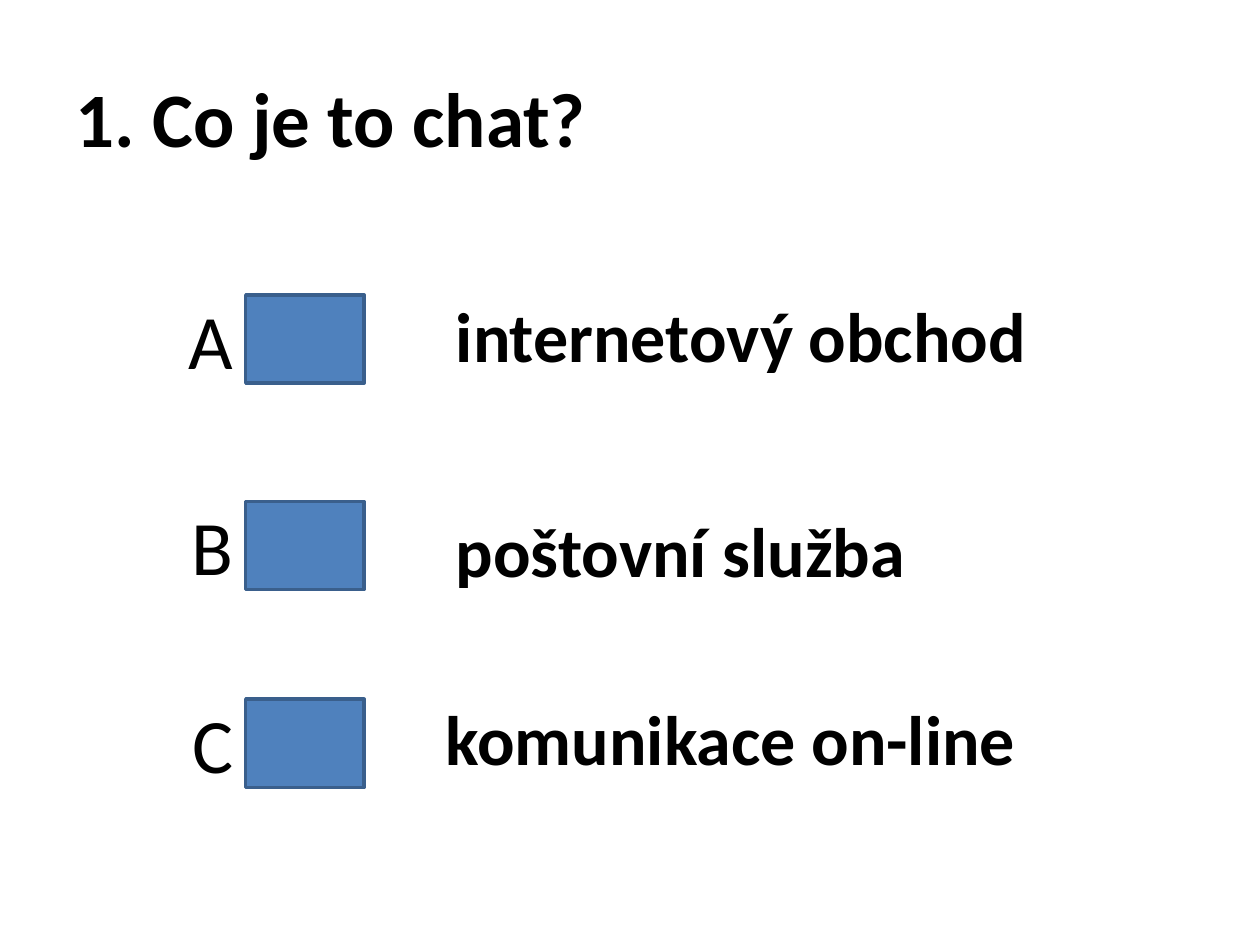
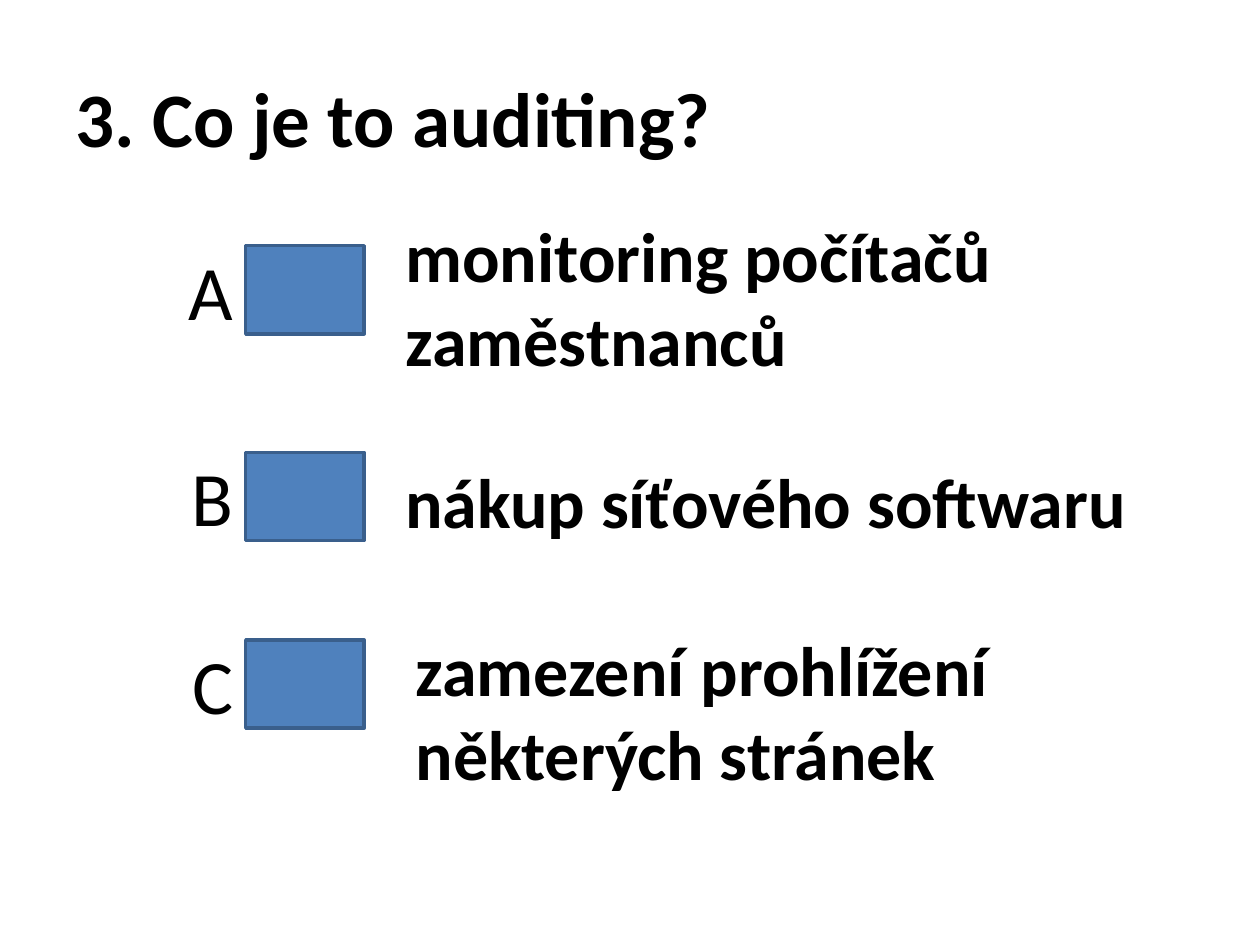
from pptx import Presentation
from pptx import util as u
from pptx.dml.color import RGBColor
from pptx.enum import shapes, text

BLACK = RGBColor(0x00, 0x00, 0x00)
BUTTON_BLUE = RGBColor(0x4F, 0x81, 0xBD)
BORDER_BLUE = RGBColor(0x3A, 0x5F, 0x8C)
FONT = "Calibri"

LETTER_LEFT, LETTER_WIDTH, LETTER_HEIGHT = 0.86, 1.09, 0.84
BUTTON_LEFT = LETTER_LEFT + LETTER_WIDTH
BUTTON_WIDTH, BUTTON_HEIGHT = 0.94, 0.7
LETTER_RISE = (LETTER_HEIGHT - BUTTON_HEIGHT) / 2
TITLE_INDENT = u.Inches(0.58)

# Each answer: button top, then the text with its left, top, width and height
QUESTIONS = [
    ("1. Co je to chat?", [
        (2.34, "internetový obchod", (3.52, 2.27, 5.16, 0.77)),
        (3.98, "poštovní služba", (3.52, 3.98, 4.53, 0.77)),
        (5.55, "komunikace on-line", (3.44, 5.47, 5, 0.77)),
    ]),
    ("3. Co je to auditing?", [
        (1.95, "monitoring počítačů zaměstnanců", (3.12, 1.64, 6.09, 1.45)),
        (3.59, "nákup síťového softwaru", (3.12, 3.59, 6.64, 0.77)),
        (5.08, "zamezení prohlížení některých stránek", (3.2, 4.92, 6.17, 1.45)),
    ]),
]


def write(shape, words, size, bold, align):
    shape.text_frame.word_wrap = True
    para = shape.text_frame.paragraphs[0]
    para.text = words
    para.alignment = align
    para.font.name = FONT
    para.font.size = u.Pt(size)
    para.font.bold = bold
    para.font.color.rgb = BLACK
    return para


def inches(*lengths):
    return [u.Inches(length) for length in lengths]


deck = Presentation()
deck.slide_width, deck.slide_height = inches(10, 7.5)
title_only = deck.slide_layouts[5]

for question, answers in QUESTIONS:
    page = deck.slides.add_slide(title_only)

    title = page.shapes.title
    title.left, title.top, title.width, title.height = inches(0.5, 0.3, 9, 1.25)
    title.text_frame.vertical_anchor = text.MSO_ANCHOR.MIDDLE
    para = write(title, question, 44, True, text.PP_ALIGN.LEFT)
    properties = para._p.get_or_add_pPr()
    properties.set("marL", str(TITLE_INDENT))
    properties.set("indent", str(-TITLE_INDENT))

    for letter, (top, answer, place) in zip("ABC", answers):
        button = page.shapes.add_shape(
            shapes.MSO_SHAPE.ACTION_BUTTON_CUSTOM,
            *inches(BUTTON_LEFT, top, BUTTON_WIDTH, BUTTON_HEIGHT))
        button.shadow.inherit = False
        button.fill.solid()
        button.fill.fore_color.rgb = BUTTON_BLUE
        button.line.color.rgb = BORDER_BLUE
        button.line.width = u.Pt(2)

        letter_box = page.shapes.add_textbox(
            *inches(LETTER_LEFT, top - LETTER_RISE, LETTER_WIDTH, LETTER_HEIGHT))
        write(letter_box, letter, 44, False, text.PP_ALIGN.RIGHT)

        answer_box = page.shapes.add_textbox(*inches(*place))
        write(answer_box, answer, 40, True, text.PP_ALIGN.LEFT)

deck.save("out.pptx")
